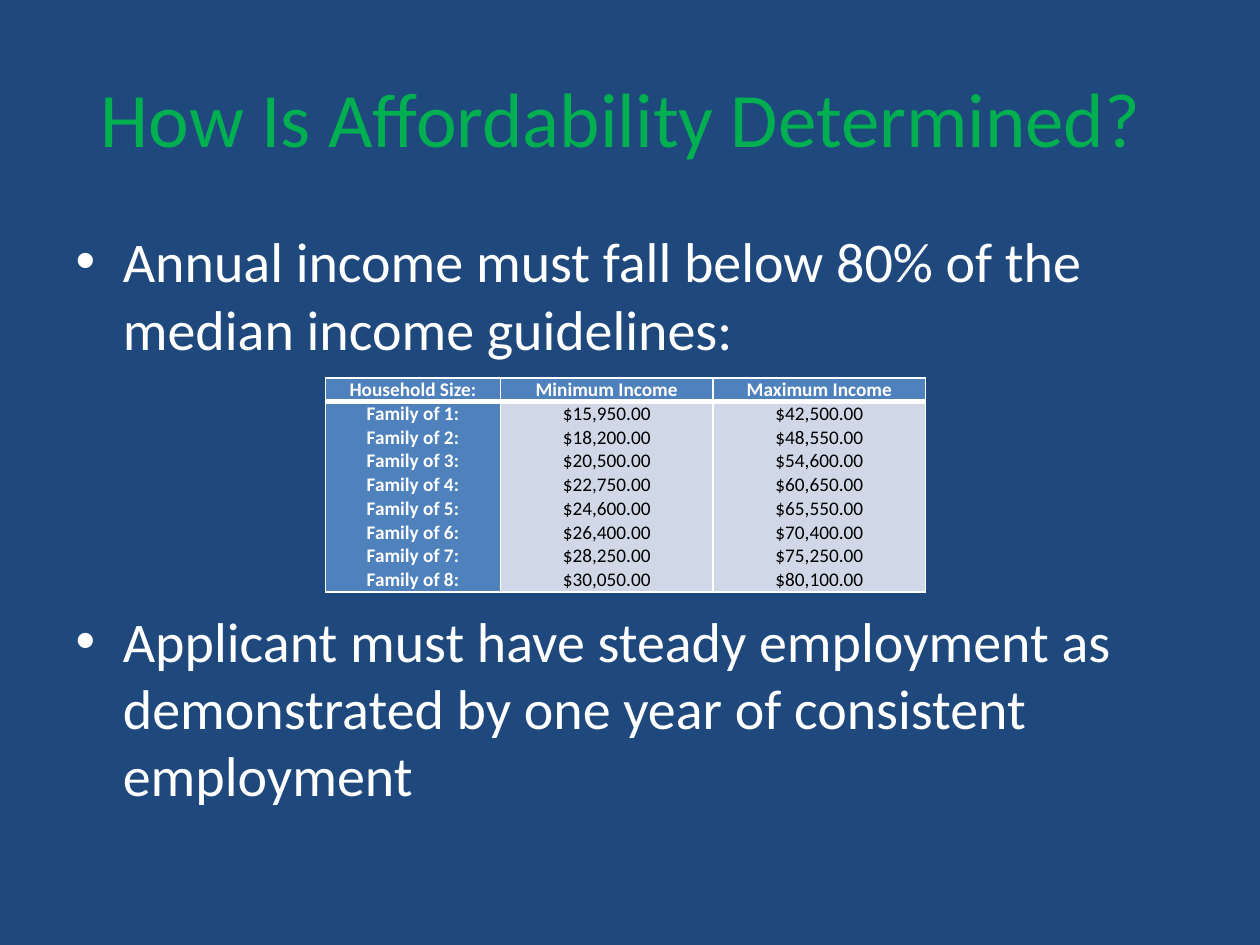
from dataclasses import dataclass

from lxml import etree
from pptx import Presentation
from pptx.dml.color import RGBColor
from pptx.enum.text import MSO_ANCHOR, MSO_AUTO_SIZE, PP_ALIGN
from pptx.oxml.ns import qn
from pptx.util import Pt

CENTER = PP_ALIGN.CENTER
LEFT = PP_ALIGN.LEFT
MIDDLE = MSO_ANCHOR.MIDDLE
TOP = MSO_ANCHOR.TOP
NO_FIT = MSO_AUTO_SIZE.NONE


@dataclass(frozen=True)
class Theme:
    font: str = "Calibri"
    background: str = "1F497D"
    title: str = "00B050"
    white: str = "FFFFFF"
    black: str = "000000"
    accent: str = "4F81BD"
    band: str = "D0D8E8"
    title_size: int = 44
    body_size: int = 32
    table_size: int = 11


THEME = Theme()

TITLE = "How Is Affordability Determined? "
BULLETS = [
    "Annual income must fall below 80% of the median income guidelines:",
    "Applicant must have steady employment as demonstrated by one year of "
    "consistent employment",
]
HEADERS = ["Household Size:", "Minimum Income", "Maximum Income"]
MINIMUMS = [15950, 18200, 20500, 22750, 24600, 26400, 28250, 30050]
MAXIMUMS = [42500, 48550, 54600, 60650, 65550, 70400, 75250, 80100]


def write(tf, lines, size, color, bold=False, align=LEFT):
    for i, line in enumerate(lines):
        p = tf.paragraphs[0] if i == 0 else tf.add_paragraph()
        p.alignment = align
        r = p.add_run()
        r.text = line
        r.font.name = THEME.font
        r.font.size = Pt(size)
        r.font.bold = bold
        r.font.color.rgb = RGBColor.from_string(color)


def place(sp, box):
    sp.left, sp.top, sp.width, sp.height = (Pt(v) for v in box)


def add_title(slide, box):
    sp = slide.shapes.title
    place(sp, box)
    tf = sp.text_frame
    tf.auto_size = NO_FIT
    tf.vertical_anchor = MIDDLE
    write(tf, [TITLE], THEME.title_size, THEME.title, align=CENTER)


def add_body(slide, box, table_gap):
    sp = slide.placeholders[1]
    place(sp, box)
    tf = sp.text_frame
    tf.auto_size = NO_FIT
    tf.vertical_anchor = TOP
    write(tf, BULLETS, THEME.body_size, THEME.white)
    tf.paragraphs[1].space_before = Pt(table_gap)


def set_borders(cell, **widths):
    tcPr = cell._tc.get_or_add_tcPr()
    for side in "LRTB":
        ln = etree.SubElement(tcPr, qn(f"a:ln{side}"), w=str(Pt(widths.get(side, 1))))
        fill = etree.SubElement(ln, qn("a:solidFill"))
        etree.SubElement(fill, qn("a:srgbClr"), val=THEME.white)


def format_cell(cell, lines, fill, color, bold, **borders):
    cell.margin_left = cell.margin_right = Pt(5)
    cell.margin_top = cell.margin_bottom = 0
    set_borders(cell, **borders)
    cell.fill.solid()
    cell.fill.fore_color.rgb = RGBColor.from_string(fill)
    write(cell.text_frame, lines, THEME.table_size, color, bold, CENTER)


def add_income_table(slide, box):
    x, y, w, h = box
    table = slide.shapes.add_table(2, 3, Pt(x), Pt(y), Pt(w), Pt(h)).table
    first_col = 100
    widths = [first_col] + [(w - first_col) / 2] * 2
    for col, width in zip(table.columns, widths):
        col.width = Pt(width)
    line_h = h / (len(MINIMUMS) + 1)
    table.rows[0].height = Pt(line_h)
    table.rows[1].height = Pt(h - line_h)

    families = [f"Family of {n}:" for n in range(1, len(MINIMUMS) + 1)]
    incomes = [[f"${v:,.2f}" for v in values] for values in (MINIMUMS, MAXIMUMS)]
    for c, (header, lines) in enumerate(zip(HEADERS, [families] + incomes)):
        format_cell(table.cell(0, c), [header], THEME.accent, THEME.white, True, B=3)
        fill, color = (THEME.band, THEME.black) if c else (THEME.accent, THEME.white)
        format_cell(table.cell(1, c), lines, fill, color, c == 0, T=3)


def main():
    prs = Presentation()
    prs.slide_width, prs.slide_height = Pt(720), Pt(540)
    slide = prs.slides.add_slide(prs.slide_layouts[1])
    bg = slide.background.fill
    bg.solid()
    bg.fore_color.rgb = RGBColor.from_string(THEME.background)
    add_title(slide, (36, 21.6, 648, 90))
    add_body(slide, (36, 126, 648, 356.4), table_gap=140)
    add_income_table(slide, (186, 216, 343, 122))
    prs.save("out.pptx")


if __name__ == "__main__":
    main()
